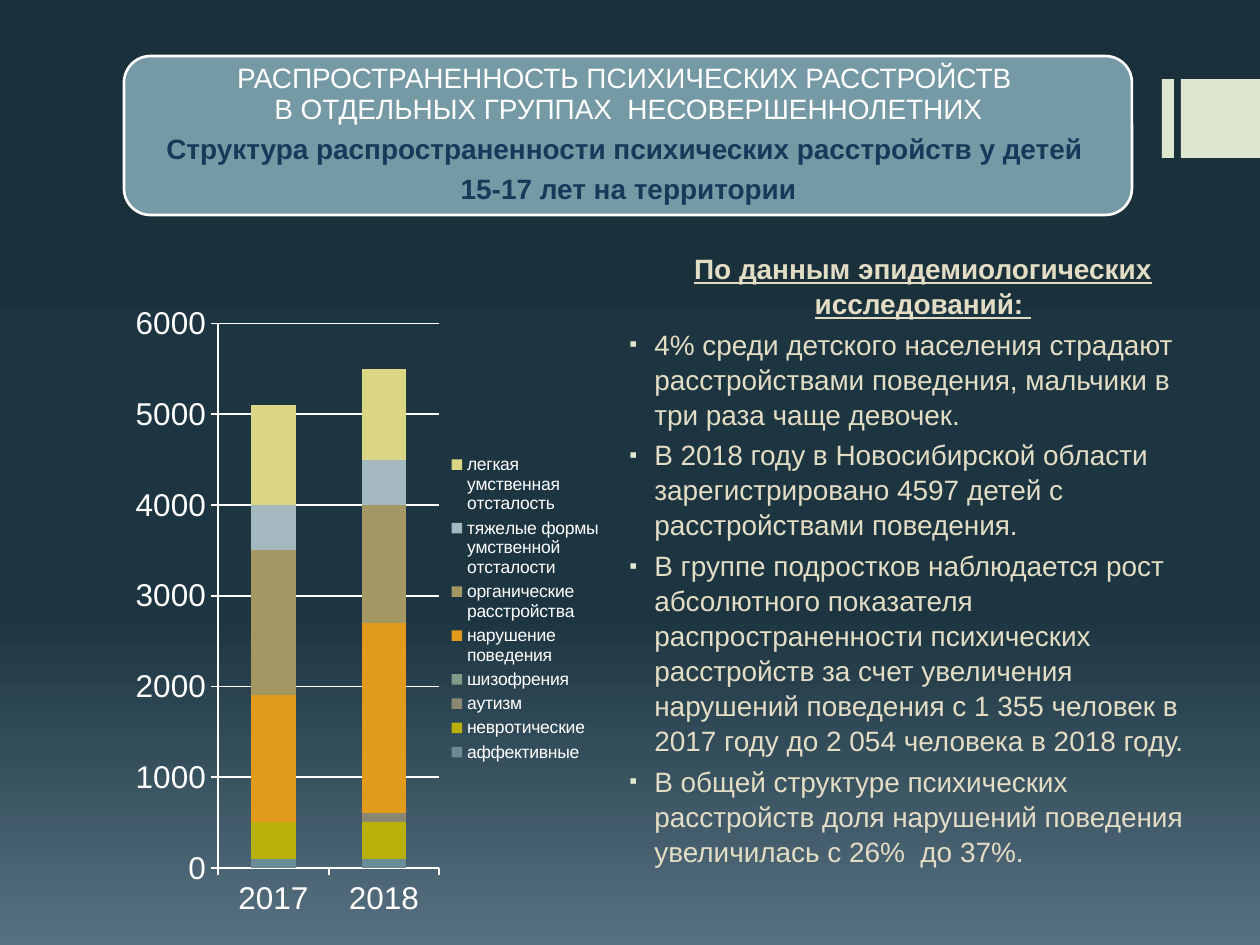
"""Builds a slide on mental disorders among minors with a stacked column chart."""
import copy
from lxml import etree
from pptx import Presentation
from pptx import util as u
from pptx.chart.data import CategoryChartData
from pptx.dml.color import RGBColor
from pptx.enum import chart as charts, shapes, text
from pptx.oxml.ns import qn

SCALE = 914400 / 126
FONT = "Arial"
WHITE, PALE, STEEL, NAVY, CREAM = "FFFFFF", "DFE6D0", "759AA5", "173A5B", "E3DDC5"
BACKGROUND = [(0, "1A313B"), (0.65, "1C3540"), (1, "587182")]

HEADING = [
    ("РАСПРОСТРАНЕННОСТЬ ПСИХИЧЕСКИХ РАССТРОЙСТВ \vВ ОТДЕЛЬНЫХ ГРУППАХ  НЕСОВЕРШЕННОЛЕТНИХ",
     dict(color=WHITE)),
    ("Структура распространенности психических расстройств у детей ", dict(color=NAVY, bold=True)),
    ("15-17 лет на территории", dict(color=NAVY, bold=True)),
]
FINDINGS_TITLE = "По данным эпидемиологических исследований: "
FINDINGS = [
    "4% среди детского населения страдают расстройствами поведения, мальчики в три раза чаще девочек.",
    "В 2018 году в Новосибирской области зарегистрировано 4597 детей с расстройствами поведения.",
    "В группе подростков наблюдается рост абсолютного показателя распространенности психических "
    "расстройств за счет увеличения нарушений поведения с 1 355 человек в 2017 году "
    "до 2 054 человека в 2018 году.",
    "В общей структуре психических расстройств доля нарушений поведения увеличилась с 26%  до 37%.",
]
YEARS = ["2017", "2018"]
DISORDERS = [
    ("аффективные", (100, 100), "6A8B95"),
    ("невротические", (400, 400), "B9B00B"),
    ("аутизм", (0, 100), "8A8872"),
    ("шизофрения", (0, 0), "819B88"),
    ("нарушение поведения", (1400, 2100), "E29A1A"),
    ("органические расстройства", (1600, 1300), "A39863"),
    ("тяжелые формы умственной отсталости", (500, 500), "A3B8BF"),
    ("легкая умственная отсталость", (1100, 1000), "DBD684"),
]


def px(*lengths):
    return [u.Emu(round(length * SCALE)) for length in lengths]


def rgb(value):
    return RGBColor.from_string(value)


def write(paragraph, content, size=16, color=WHITE, bold=False, underline=False,
          align=text.PP_ALIGN.LEFT, spacing=None, before=0, after=0, margin=0, hanging=0, bullet=None):
    paragraph.text = content
    paragraph.alignment = align
    paragraph.line_spacing = spacing
    paragraph.space_before, paragraph.space_after = u.Pt(before), u.Pt(after)
    for run in paragraph.runs:
        font = run.font
        font.name, font.size, font.bold, font.underline = FONT, u.Pt(size), bold, underline
        font.color.rgb = rgb(color)
    for line_break in paragraph._p.findall(qn("a:br")):
        etree.SubElement(line_break, qn("a:rPr"), sz=str(size * 100))
    properties = paragraph._p.get_or_add_pPr()
    left, indent = px(margin, -hanging)
    properties.set("marL", str(left))
    properties.set("indent", str(indent))
    if bullet:
        bullet_color = etree.SubElement(properties, qn("a:buClr"))
        etree.SubElement(bullet_color, qn("a:srgbClr"), val=PALE)
        etree.SubElement(properties, qn("a:buSzPct"), val="80000")
        etree.SubElement(properties, qn("a:buFont"), typeface=FONT)
        etree.SubElement(properties, qn("a:buChar"), char=bullet)


def place(element, x, y, width, height):
    """Fixes the inner layout of a plot area or legend as fractions of the chart."""
    for old in element.findall(qn("c:layout")):
        element.remove(old)
    layout = etree.Element(qn("c:layout"))
    manual = etree.SubElement(layout, qn("c:manualLayout"))
    values = dict(xMode="edge", yMode="edge", x=x, y=y, w=width, h=height)
    if element.tag == qn("c:plotArea"):
        values = dict(layoutTarget="inner", **values)
    for name, value in values.items():
        etree.SubElement(manual, qn(f"c:{name}"), val=str(value))
    position = element.find(qn("c:legendPos"))
    element.insert(0 if position is None else element.index(position) + 1, layout)


class Deck:
    """Holds the presentation, its style and the current slide."""

    def __init__(self, width, height):
        self.presentation = Presentation()
        self.presentation.slide_width, self.presentation.slide_height = px(width, height)
        self.slide = self.presentation.slides.add_slide(self.presentation.slide_layouts[5])

    def background(self, colors):
        fill = self.slide.background.fill
        fill.gradient()
        fill.gradient_angle = 270
        first = fill.gradient_stops[0]._gs
        first.addnext(copy.deepcopy(first))
        for stop, (position, color) in zip(fill.gradient_stops, colors):
            stop.position = position
            stop.color.rgb = rgb(color)

    def box(self, x, y, width, height, fill, kind=shapes.MSO_SHAPE.RECTANGLE, line=None):
        shape = self.slide.shapes.add_shape(kind, *px(x, y, width, height))
        shape.shadow.inherit = False
        shape.fill.solid()
        shape.fill.fore_color.rgb = rgb(fill)
        if line:
            shape.line.color.rgb = rgb(line)
            shape.line.width = u.Pt(1.5)
        else:
            shape.line.fill.background()

    def fill_frame(self, frame, paragraphs, anchor, **common):
        frame.word_wrap = True
        frame.auto_size = text.MSO_AUTO_SIZE.NONE
        frame.vertical_anchor = anchor
        for index, (content, style) in enumerate(paragraphs):
            paragraph = frame.add_paragraph() if index else frame.paragraphs[0]
            write(paragraph, content, **{**common, **style})

    def title(self, x, y, width, height, paragraphs):
        shape = self.slide.shapes.title
        shape.left, shape.top, shape.width, shape.height = px(x, y, width, height)
        tree = self.slide.shapes._spTree
        tree.append(shape._element)
        frame = shape.text_frame
        frame.margin_left, frame.margin_right, frame.margin_top, frame.margin_bottom = px(9, 9, 9, 9)
        self.fill_frame(frame, paragraphs, text.MSO_ANCHOR.MIDDLE,
                        align=text.PP_ALIGN.CENTER, spacing=0.9, after=5.6)

    def body(self, x, y, width, height, paragraphs):
        shape = self.slide.shapes.add_textbox(*px(x, y, width, height))
        self.fill_frame(shape.text_frame, paragraphs, text.MSO_ANCHOR.TOP,
                        color=CREAM, spacing=u.Pt(20), before=3.2)

    def stacked_chart(self, x, y, width, height, categories, series):
        data = CategoryChartData()
        data.categories = categories
        for name, values, _ in series:
            data.add_series(name, values)
        chart = self.slide.shapes.add_chart(
            charts.XL_CHART_TYPE.COLUMN_STACKED, *px(x, y, width, height), data).chart
        chart.has_title = False
        chart.has_legend = True
        chart.legend.position = charts.XL_LEGEND_POSITION.RIGHT
        chart.legend.include_in_layout = False
        for font, size in ((chart.font, 18), (chart.legend.font, 10)):
            font.name, font.size = FONT, u.Pt(size)
            font.color.rgb = rgb(WHITE)
        plot = chart.plots[0]
        plot.gap_width, plot.overlap, plot.vary_by_categories = 150, 100, False
        for item, (_, _, color) in zip(plot.series, series):
            item.format.fill.solid()
            item.format.fill.fore_color.rgb = rgb(color)
        axis = chart.value_axis
        axis.minimum_scale, axis.maximum_scale, axis.major_unit = 0, 6000, 1000
        axis.has_major_gridlines = True
        for lined in (axis, chart.category_axis, axis.major_gridlines):
            lined.format.line.color.rgb = rgb(WHITE)
            lined.format.line.width = u.Pt(1)
        for lined in (axis, chart.category_axis):
            lined.major_tick_mark = charts.XL_TICK_MARK.OUTSIDE
        place(chart._chartSpace.chart.plotArea, 0.19, 0.05, 0.45, 0.86)
        place(chart.legend._element, 0.65, 0.25, 0.33, 0.5)


def main():
    deck = Deck(1260, 945)
    deck.background(BACKGROUND)
    for x, width in ((1162, 12), (1181, 79)):
        deck.box(x, 79, width, 79, PALE)
    deck.box(124, 56, 1008, 159, STEEL, shapes.MSO_SHAPE.ROUNDED_RECTANGLE, WHITE)
    deck.title(132, 63, 993, 144, HEADING)
    deck.stacked_chart(125, 292, 491, 633, YEARS, DISORDERS)
    heading = dict(bold=True, underline=True, align=text.PP_ALIGN.CENTER, margin=6)
    item = dict(margin=32, hanging=25, bullet="▪")
    deck.body(610, 244, 620, 407, [(FINDINGS_TITLE, heading)] + [(line, item) for line in FINDINGS])
    deck.presentation.save("out.pptx")


if __name__ == "__main__":
    main()
